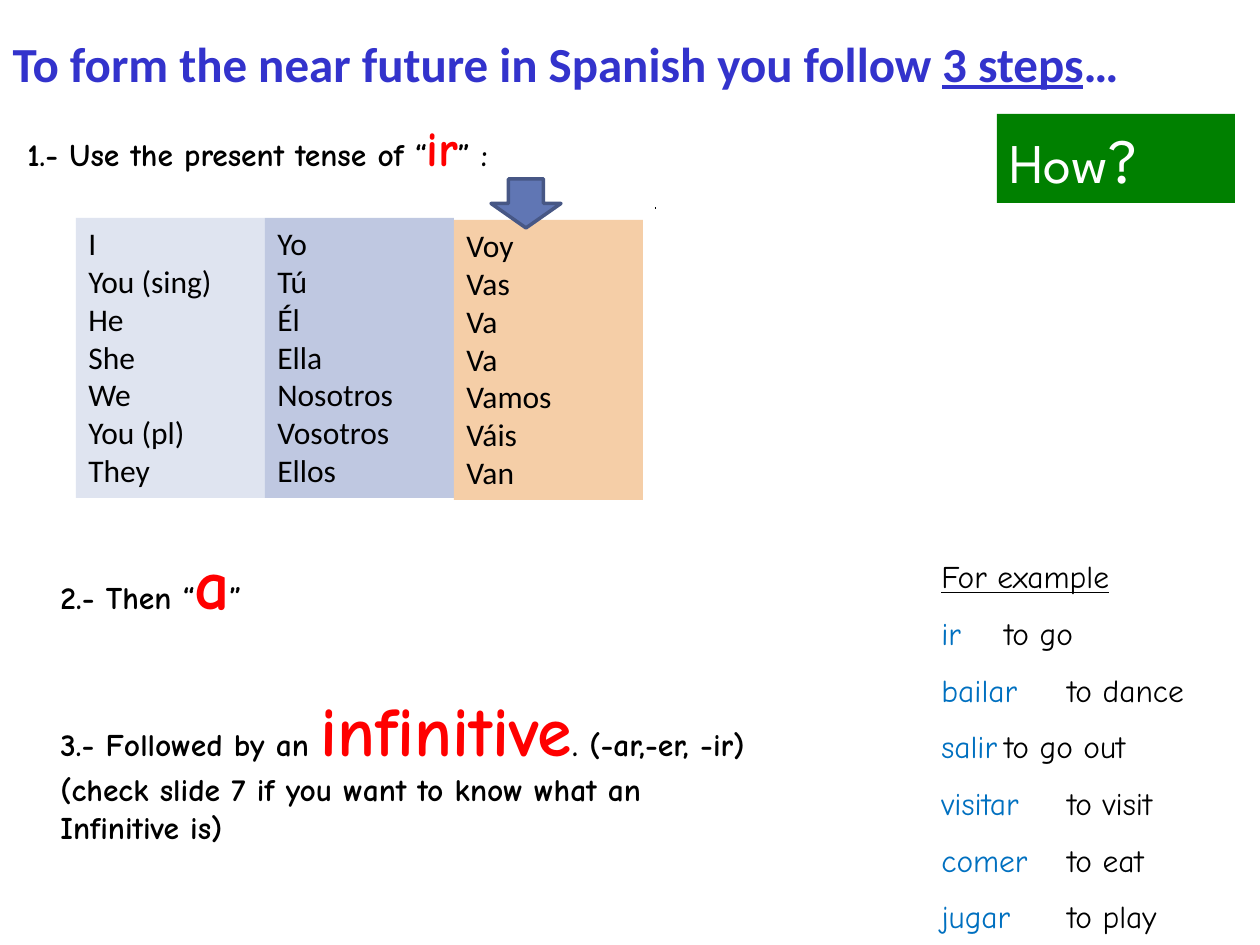
from pptx import Presentation, util as u
from pptx.dml.color import RGBColor
from pptx.enum import shapes, text

PX = 914400 / 126
COLORS = {
    "blue": "3333CC", "green": "008000", "white": "FFFFFF", "black": "000000",
    "red": "FF0000", "verb": "0070C0", "pale": "DFE4F0", "mid": "BFC8E1",
    "peach": "F5CEA7", "arrow": "6076B4", "arrow_edge": "475785",
}

TITLE = [("To form the near future in Spanish you follow ", {}),
         ("3 steps", {"underline": True}), ("…", {})]
HOW = [[("How", {}), ("?", {"size": 36})]]

STEPS = [
    ((15, 111, 615, 111),
     [[("1.- Use the present tense of “", {}), ("ir", {"size": 28, "color": "red"}), ("” :", {})]]),
    ((48, 680, 1135, 174),
     [[("3.- Followed by an ", {}), ("infinitive", {"size": 40, "color": "red"}),
       (". (-ar,-er, -ir)", {})],
      [("(check slide 7 if you want to know what an", {})],
      [("Infinitive is)", {})]]),
    ((48, 533, 615, 136),
     [[("2.- Then “", {}), ("a", {"size": 40, "color": "red"}), ("”", {})]]),
]

COLUMNS = [
    ("pale", 218, ["I", "You (sing)", "He", "She", "We", "You (pl)", "They"]),
    ("mid", 218, ["Yo", "Tú", "Él", "Ella", "Nosotros", "Vosotros", "Ellos"]),
    ("peach", 220, ["Voy", "Vas", "Va", "Va", "Vamos", "Váis", "Van"]),
]
COLUMN_LEFT, COLUMN_WIDTH, COLUMN_HEIGHT = 76, 189, 280

EXAMPLES = [("ir", "to go"), ("bailar", "to dance"), ("salir", "to go out"),
            ("visitar", "to visit"), ("comer", "to eat"), ("jugar", "to play")]


def px(value):
    return round(value * PX)


def rgb(name):
    return RGBColor.from_string(COLORS[name])


def add_span(para, words, font, size=18, color="black", bold=False, underline=False):
    span = para.add_run()
    span.text = words
    span.font.name = font
    span.font.size = u.Pt(size)
    span.font.color.rgb = rgb(color)
    span.font.bold = bold
    span.font.underline = underline


def write(frame, lines, spacing=None, **style):
    for index, line in enumerate(lines):
        para = frame.add_paragraph() if index else frame.paragraphs[0]
        para.alignment = text.PP_ALIGN.LEFT
        if spacing and index:
            para.line_spacing = spacing
        for words, changes in line:
            add_span(para, words, **{**style, **changes})


def add_box(page, place, fill=None, line=None, width=1.5, kind=shapes.MSO_SHAPE.RECTANGLE):
    box = page.shapes.add_shape(kind, *map(px, place))
    box.shadow.inherit = False
    if fill:
        box.fill.solid()
        box.fill.fore_color.rgb = rgb(fill)
    else:
        box.fill.background()
    if line:
        box.line.color.rgb = rgb(line)
        box.line.width = u.Pt(width)
    else:
        box.line.fill.background()
    box.text_frame.word_wrap = True
    box.text_frame.vertical_anchor = text.MSO_ANCHOR.TOP
    return box


def main():
    deck = Presentation()
    deck.slide_width, deck.slide_height = px(1260), px(945)
    page = deck.slides.add_slide(deck.slide_layouts[5])

    title = page.shapes.title
    title.left, title.top, title.width, title.height = map(px, (0, 0, 1260, 125))
    title.text_frame.vertical_anchor = text.MSO_ANCHOR.MIDDLE
    write(title.text_frame, [TITLE], font="Calibri", size=28, color="blue", bold=True)

    how = add_box(page, (997, 114, 238, 89), "green")
    write(how.text_frame, HOW, font="League Spartan", size=32, color="white")

    for place, lines in STEPS:
        step = add_box(page, place, "white", "white")
        write(step.text_frame, lines, font="Comic Neue", bold=True)

    for index, (fill, top, words) in enumerate(COLUMNS):
        left = COLUMN_LEFT + index * COLUMN_WIDTH
        column = add_box(page, (left, top, COLUMN_WIDTH, COLUMN_HEIGHT), fill)
        write(column.text_frame, [[(word, {})] for word in words], font="Calibri")

    add_box(page, (491, 179, 70, 49), "arrow", "arrow_edge", 2, shapes.MSO_SHAPE.DOWN_ARROW)

    examples = add_box(page, (929, 551, 302, 394), line="white")
    lines = [[("For example", {"underline": True})]]
    lines += [[(verb, {"color": "verb"}), ("\t" + meaning, {})] for verb, meaning in EXAMPLES]
    write(examples.text_frame, lines, spacing=1.5, font="Comic Neue")

    builder = page.shapes.build_freeform(655, 208, scale=PX)
    builder.add_line_segments([(656, 208)], close=False)
    dot = builder.convert_to_shape()
    dot.shadow.inherit = False
    dot.fill.background()
    dot.line.color.rgb = rgb("black")
    dot.line.width = u.Pt(1.5)

    deck.save("out.pptx")


if __name__ == "__main__":
    main()
